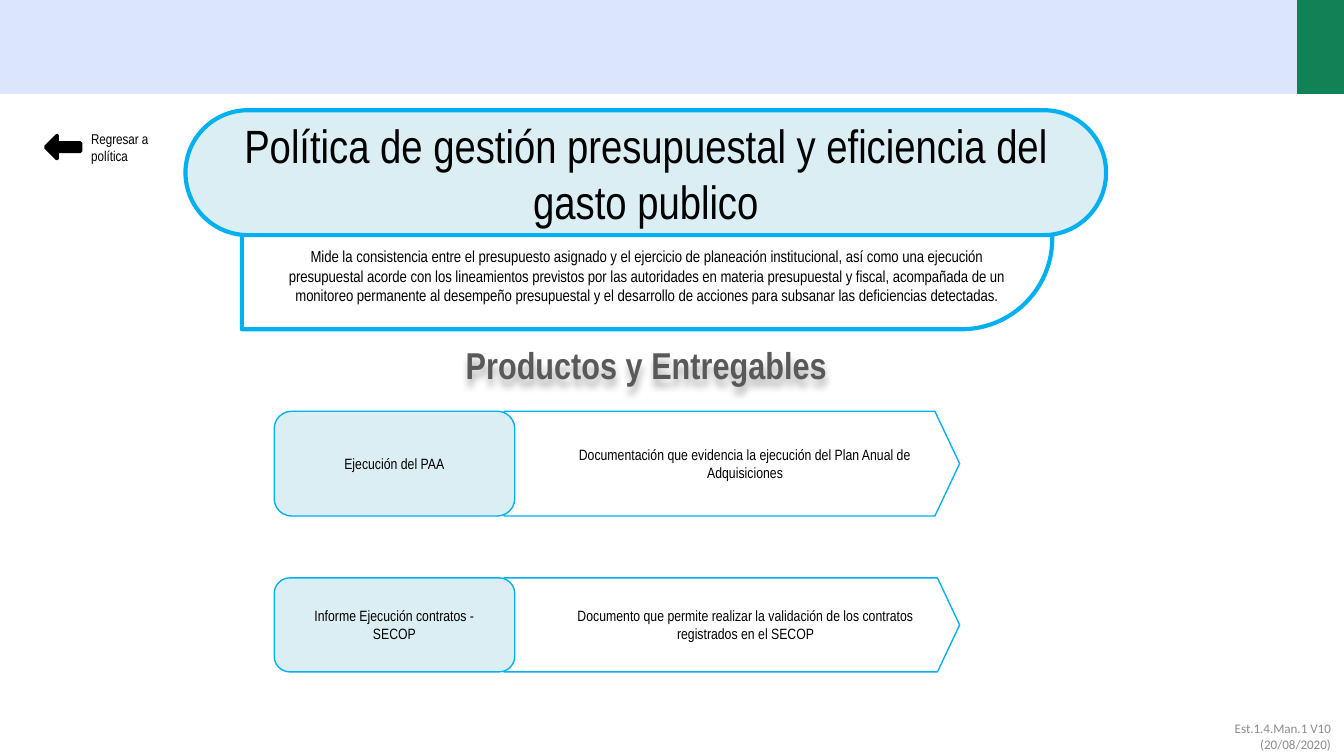
from lxml import etree
from pptx import Presentation
from pptx.dml.color import RGBColor
from pptx.enum import shapes, text
from pptx.oxml import ns
from pptx.util import Inches, Pt

CYAN, PALE, BLACK = "00B0F0", "DBEEF4", "000000"
SHAPE, ALIGN, ANCHOR = shapes.MSO_SHAPE, text.PP_ALIGN, text.MSO_ANCHOR


def rgb(value):
    return RGBColor.from_string(value)


def add_shape(s, kind, box, fill=None, line=None, weight=0.75, adj=()):
    sp = s.shapes.add_shape(kind, *map(Inches, box))
    sp.shadow.inherit = False
    if fill:
        sp.fill.solid()
        sp.fill.fore_color.rgb = rgb(fill)
    else:
        sp.fill.background()
    if line:
        sp.line.color.rgb = rgb(line)
        sp.line.width = Pt(weight)
    else:
        sp.line.fill.background()
    for i, value in enumerate(adj):
        sp.adjustments[i] = value
    return sp


def add_textbox(s, box):
    return s.shapes.add_textbox(*map(Inches, box))


def write(sp, words, size, align=ALIGN.CENTER, anchor=ANCHOR.MIDDLE,
          font="Arial Narrow", color=BLACK, bold=False, indent=0):
    tf = sp.text_frame
    tf.word_wrap = True
    tf.vertical_anchor = anchor
    p = tf.paragraphs[0]
    p.alignment = align
    if indent:
        p._p.get_or_add_pPr().set("marL", str(Inches(indent)))
    r = p.add_run()
    r.text = words
    r.font.name, r.font.size, r.font.bold = font, Pt(size), bold
    r.font.color.rgb = rgb(color)


def add_soft_shadow(sp):
    effects = etree.SubElement(sp._element.spPr, ns.qn("a:effectLst"))
    shadow = etree.SubElement(effects, ns.qn("a:outerShdw"), blurRad="50800",
                              dist="38100", dir="5400000", algn="t", rotWithShape="0")
    black = etree.SubElement(shadow, ns.qn("a:srgbClr"), val=BLACK)
    etree.SubElement(black, ns.qn("a:alpha"), val="30000")


def top_band(s, x, y, w, h, accent=0.35):
    add_shape(s, SHAPE.RECTANGLE, (x + w - accent, y, accent, h), "138156")
    add_shape(s, SHAPE.RECTANGLE, (x, y, w - accent, h), "DBE6FC")


def policy_header(s, x, y, w, h):
    # Description panel, tucked under the title
    panel = add_shape(s, SHAPE.ROUND_2_DIAG_RECTANGLE, (x + 0.42, y + 0.28, 6.03, h - 0.28),
                      line=CYAN, weight=2.25, adj=(0.5, 0))
    panel.text_frame.margin_top = Inches(0.54)
    panel.text_frame.margin_bottom = 0
    write(panel, "Mide la consistencia entre el presupuesto asignado y el ejercicio de "
          "planeación institucional, así como una ejecución presupuestal acorde con los "
          "lineamientos previstos por las autoridades en materia presupuestal y fiscal, "
          "acompañada de un monitoreo permanente al desempeño presupuestal y el desarrollo "
          "de acciones para subsanar las deficiencias detectadas.", 8.55, anchor=ANCHOR.TOP)
    # Title pill
    pill = add_shape(s, SHAPE.ROUNDED_RECTANGLE, (x, y, w, 0.93), PALE, CYAN, 2.25, (0.5,))
    write(pill, "Política de gestión presupuestal y eficiencia del gasto publico", 25)


def section_heading(s, *box):
    heading = add_textbox(s, box)
    write(heading, "Productos y Entregables", 20, anchor=ANCHOR.TOP,
          color="595959", bold=True)
    add_soft_shadow(heading)


def product_row(s, x, y, w, h, product, detail):
    label_w, overlap = 1.79, 0.08
    left = label_w - overlap
    plate = add_shape(s, SHAPE.PENTAGON, (x + left, y, w - left, h), line=CYAN, adj=(0.236,))
    write(plate, detail, 8, indent=0.29)
    label = add_shape(s, SHAPE.ROUNDED_RECTANGLE, (x, y, label_w, h), PALE, CYAN)
    write(label, product, 8)


def back_button(s, x, y, w, h):
    add_shape(s, SHAPE.LEFT_ARROW, (x, y + 0.09, 0.26, 0.17), BLACK, BLACK, 2, (0.357, 0.5))
    caption = add_textbox(s, (x + 0.24, y, w - 0.24, h))
    write(caption, "Regresar a política", 7.6, ALIGN.LEFT, ANCHOR.TOP)


def footer(s, *box):
    write(add_textbox(s, box), "Est.1.4.Man.1 V10 (20/08/2020)", 7, ALIGN.RIGHT,
          font="Calibri", color="8C8C8C")


def main():
    prs = Presentation()
    # Widescreen, 16:9
    prs.slide_width = Inches(10)
    prs.slide_height = prs.slide_width * 9 // 16
    s = prs.slides.add_slide(prs.slide_layouts[6])

    top_band(s, 0, 0, 10, 0.7)
    policy_header(s, 1.38, 0.82, 6.85, 1.63)
    section_heading(s, 1.09, 2.5, 7.44, 0.44)
    back_button(s, 0.34, 0.92, 1.03, 0.36)

    # Products and their deliverables
    rows = [
        (3.06, 0.78, "Ejecución del PAA",
         "Documentación que evidencia la ejecución del Plan Anual de Adquisiciones"),
        (4.3, 0.7, "Informe Ejecución contratos - SECOP",
         "Documento que permite realizar la validación de los contratos "
         "registrados en el SECOP"),
    ]
    for y, h, product, detail in rows:
        product_row(s, 2.04, y, 5.1, h, product, detail)

    footer(s, 8.61, 5.33, 1.39, 0.3)
    prs.save("out.pptx")


if __name__ == "__main__":
    main()
